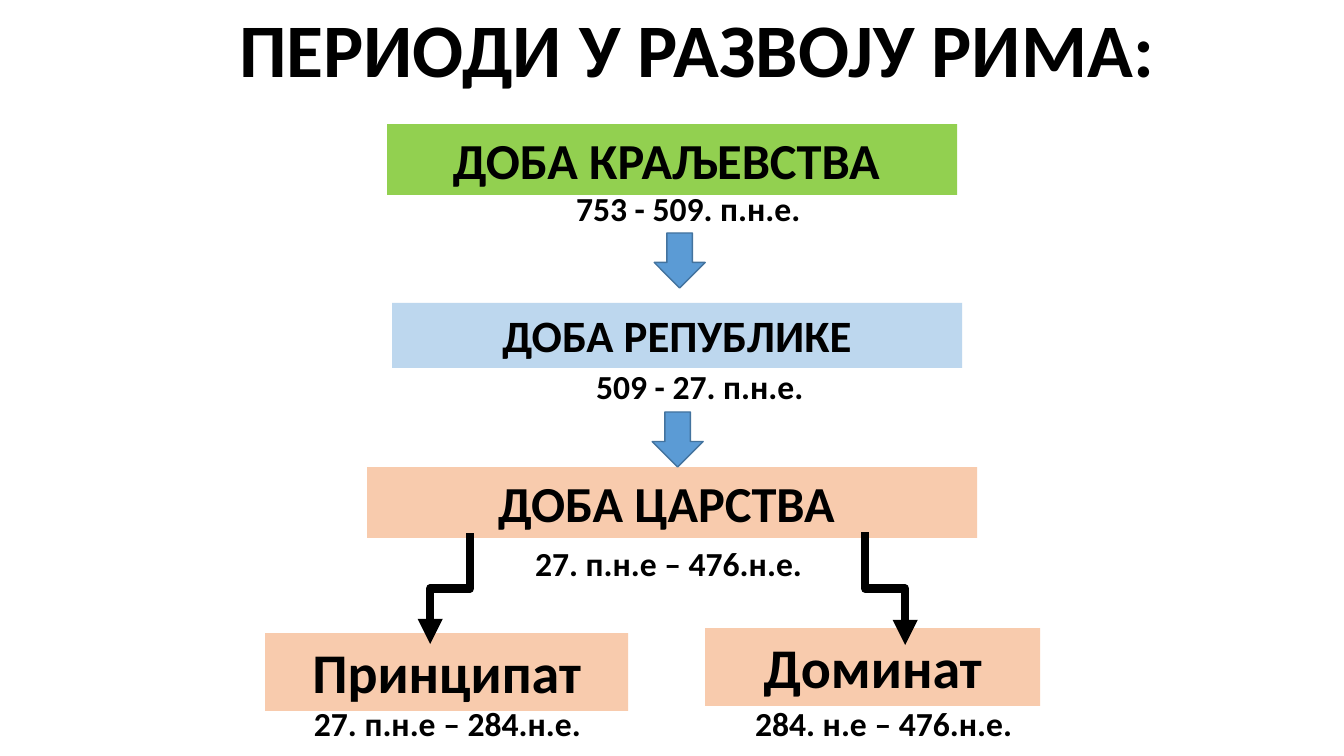
from pptx import Presentation
from pptx import util as u
from pptx.dml.color import RGBColor
from pptx.enum import shapes, text
from pptx.oxml import parse_xml
from pptx.oxml.ns import nsdecls

BLACK = RGBColor(0, 0, 0)
GREEN = RGBColor(0x92, 0xD0, 0x50)
PALE = RGBColor(0xBD, 0xD7, 0xEE)
PEACH = RGBColor(0xF8, 0xCB, 0xAD)
BLUE = RGBColor(0x5B, 0x9B, 0xD5)
EDGE = RGBColor(0x43, 0x73, 0x9E)

TITLE = ("ПЕРИОДИ У РАЗВОЈУ РИМА:", (229, 20, 1086, 66))
ERAS = [
    ("ДОБА КРАЉЕВСТВА ", (387, 124, 570, 71), GREEN, 36),
    (" ДОБА РЕПУБЛИКЕ ", (392, 303, 570, 65), PALE, 32),
    ("ДОБА ЦАРСТВА ", (367, 467, 610, 71), PEACH, 36),
    ("Принципат", (265, 633, 363, 78), PEACH, 40),
    ("Доминат", (705, 628, 335, 78), PEACH, 40),
]
DATES = [
    ("753 - 509. п.н.е.", (566, 183, 246, 50)),
    ("509 - 27. п.н.е.", (586, 361, 229, 50)),
    ("27. п.н.е – 476.н.е.", (525, 538, 289, 50)),
    ("27. п.н.е – 284.н.е.", (304, 698, 289, 50)),
    ("284. н.е – 476.н.е.", (745, 698, 279, 50)),
]
ARROWS = [(654, 233, 51, 55), (652, 412, 51, 55)]
FORKS = [((865, 532), (905, 645)), ((470, 533), (430, 644))]


def px(*vals):
    return [u.Emu(round(v * 914400 / 100.8)) for v in vals]


def write(frame, words, size, align, anchor, wrap=True, fit=text.MSO_AUTO_SIZE.NONE):
    frame.word_wrap = wrap
    frame.auto_size = fit
    frame.vertical_anchor = anchor
    para = frame.paragraphs[0]
    para.alignment = align
    run = para.add_run()
    run.text = words
    look = {"name": "Calibri", "size": u.Pt(size), "bold": True}
    for key, val in look.items():
        setattr(run.font, key, val)
    run.font.color.rgb = BLACK
    return para


def draw(kind, box, fill):
    shape = slide.shapes.add_shape(kind, *px(*box))
    shape.shadow.inherit = False
    shape.fill.solid()
    shape.fill.fore_color.rgb = fill
    shape.line.fill.background()
    return shape


def fork(start, end):
    (x1, y1), (x2, y2) = start, end
    side = 1 if x2 > x1 else -1
    mid_x, mid_y = (x1 + x2) / 2, (y1 + y2) / 2
    half, rise = side * (y2 - y1) / 2, abs(x2 - x1) / 2
    ends = px(mid_x + half, mid_y - rise, mid_x - half, mid_y + rise)
    link = slide.shapes.add_connector(shapes.MSO_CONNECTOR.ELBOW, *ends)
    link.rotation = 270 if side > 0 else 90
    link.line.color.rgb = BLACK
    link.line.width = u.Pt(6)
    link.line._get_or_add_ln().append(
        parse_xml(f'<a:tailEnd {nsdecls("a")} type="triangle"/>'))
    link._element.spPr.append(parse_xml(f'<a:effectLst {nsdecls("a")}/>'))


deck = Presentation()
deck.slide_width, deck.slide_height = u.Inches(13.33), u.Inches(7.5)
slide = deck.slides.add_slide(deck.slide_layouts[5])

words, box = TITLE
title = slide.shapes.title
for side, val in zip(("left", "top", "width", "height"), px(*box)):
    setattr(title, side, val)
head = write(title.text_frame, words, 54, text.PP_ALIGN.LEFT, text.MSO_ANCHOR.MIDDLE)
head.line_spacing = 0.9

for words, box, fill, size in ERAS:
    era = draw(shapes.MSO_SHAPE.RECTANGLE, box, fill)
    write(era.text_frame, words, size, text.PP_ALIGN.CENTER, text.MSO_ANCHOR.TOP,
          fit=text.MSO_AUTO_SIZE.SHAPE_TO_FIT_TEXT)

for box in ARROWS:
    arrow = draw(shapes.MSO_SHAPE.DOWN_ARROW, box, BLUE)
    arrow.line.color.rgb = EDGE
    arrow.line.width = u.Pt(1)

for start, end in FORKS:
    fork(start, end)

for words, box in DATES:
    date = slide.shapes.add_textbox(*px(*box))
    write(date.text_frame, words, 24, text.PP_ALIGN.LEFT, text.MSO_ANCHOR.TOP,
          False, text.MSO_AUTO_SIZE.SHAPE_TO_FIT_TEXT)

deck.save("out.pptx")
